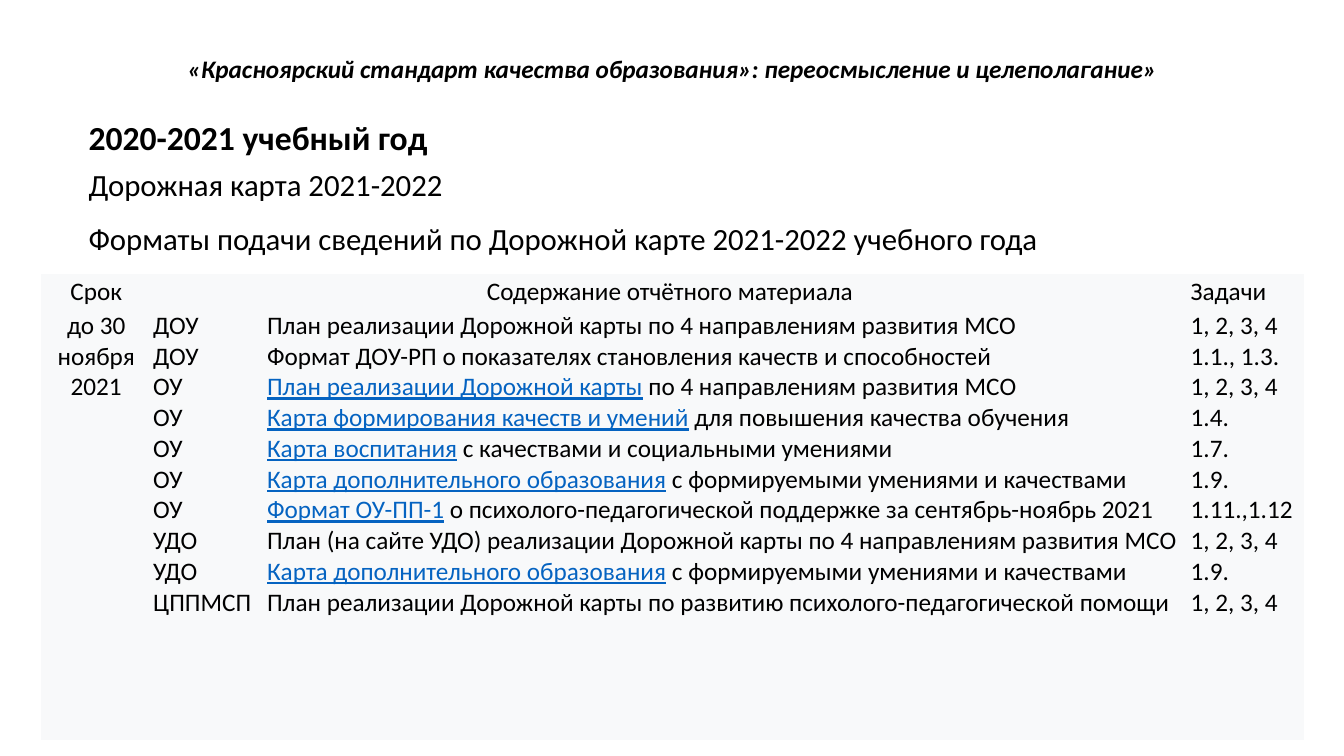
"""Build the roadmap reporting slide for the 2021-2022 school year."""
from dataclasses import dataclass

from pptx import Presentation
from pptx.dml.color import RGBColor
from pptx.enum.text import MSO_ANCHOR, PP_ALIGN
from pptx.oxml.ns import qn
from pptx.util import Inches, Pt

COLORS = {"ink": "000000", "link": "0563C1", "cell": "F8F9FA"}
FONT = "Calibri"
PLAIN = "{2D5ABB26-0587-4C30-8999-92F81FD0307C}"


@dataclass
class Report:
    """One reporting line: who hands it in, what it is, and its tasks."""
    org: str
    link: str
    text: str
    tasks: str


@dataclass
class Line:
    """One heading line above the table."""
    text: str
    size: int
    bold: bool
    gap: int


LINES = [
    Line("2020-2021 учебный год", 24, True, 0),
    Line("Дорожная карта 2021-2022", 22, False, 6),
    Line("Форматы подачи сведений по Дорожной карте 2021-2022 учебного года", 22, False, 6),
]
EXTRA = "Карта дополнительного образования"
SKILLS = " с формируемыми умениями и качествами"
PLAN = "План реализации Дорожной карты"
FOUR = " по 4 направлениям развития МСО"
ALL = "1, 2, 3, 4"
REPORTS = [
    Report("ДОУ", "", PLAN + FOUR, ALL),
    Report("ДОУ", "", "Формат ДОУ-РП о показателях становления качеств и способностей", "1.1., 1.3."),
    Report("ОУ", PLAN, FOUR, ALL),
    Report("ОУ", "Карта формирования качеств и умений", " для повышения качества обучения", "1.4."),
    Report("ОУ", "Карта воспитания", " с качествами и социальными умениями", "1.7."),
    Report("ОУ", EXTRA, SKILLS, "1.9."),
    Report("ОУ", "Формат ОУ-ПП-1",
           " о психолого-педагогической поддержке за сентябрь-ноябрь 2021", "1.11.,1.12"),
    Report("УДО", "", "План (на сайте УДО) реализации Дорожной карты" + FOUR, ALL),
    Report("УДО", EXTRA, SKILLS, "1.9."),
    Report("ЦППМСП", "", PLAN + " по развитию психолого-педагогической помощи", ALL),
]
WIDTHS = [1.09, 1.13, 9.16, 1.14]
HEIGHTS = [0.31, 4.28]


def write(para, text: str, size: int = 18, bold: bool = False,
          italic: bool = False, link: bool = False) -> None:
    """Add text to a paragraph, breaking the line at each newline."""
    for index, part in enumerate(text.split("\n")):
        if index:
            para.add_line_break()
        if not part:
            continue
        run = para.add_run()
        run.text = part
        font = run.font
        font.name, font.size = FONT, Pt(size)
        font.bold, font.italic, font.underline = bold, italic, link
        font.color.rgb = RGBColor.from_string(COLORS["link" if link else "ink"])


def add_box(slide, left: float, top: float, width: float, height: float):
    """Add a wrapping text box and return its frame."""
    frame = slide.shapes.add_textbox(
        Inches(left), Inches(top), Inches(width), Inches(height)).text_frame
    frame.word_wrap = True
    return frame


def add_head(slide) -> None:
    """Draw the title and the heading lines."""
    frame = add_box(slide, 0.41, 0.4, 12.52, 0.6)
    frame.vertical_anchor = MSO_ANCHOR.MIDDLE
    title = frame.paragraphs[0]
    title.alignment, title.line_spacing = PP_ALIGN.CENTER, 0.9
    write(title, "«Красноярский стандарт качества образования»: переосмысление и целеполагание»",
          bold=True, italic=True)
    frame = add_box(slide, 0.78, 1.11, 9.73, 1.5)
    for index, line in enumerate(LINES):
        para = frame.add_paragraph() if index else frame.paragraphs[0]
        para.space_before = para.space_after = Pt(line.gap)
        write(para, line.text, size=line.size, bold=line.bold)


def add_grid(slide) -> None:
    """Draw the table of reports."""
    shape = slide.shapes.add_table(2, 4, Inches(0.41), Inches(2.72),
                                   Inches(sum(WIDTHS)), Inches(sum(HEIGHTS)))
    shape.element.find(".//" + qn("a:tableStyleId")).text = PLAIN
    table = shape.table
    table.first_row = table.horz_banding = False
    for column, width in zip(table.columns, WIDTHS):
        column.width = Inches(width)
    for row, height in zip(table.rows, HEIGHTS):
        row.height = Inches(height)
    for cell in table.iter_cells():
        cell.margin_left = cell.margin_right = Inches(0.02)
        cell.margin_top = cell.margin_bottom = Inches(0.02)
        cell.fill.solid()
        cell.fill.fore_color.rgb = RGBColor.from_string(COLORS["cell"])
    table.cell(0, 1).merge(table.cell(0, 2))

    texts = {
        (0, 0): "Срок",
        (0, 1): "Содержание отчётного материала",
        (0, 3): "Задачи",
        (1, 0): "до 30 ноября 2021",
        (1, 1): "\n".join(report.org for report in REPORTS),
        (1, 3): "\n".join(report.tasks for report in REPORTS),
    }
    for (row, col), text in texts.items():
        cell = table.cell(row, col)
        cell.vertical_anchor = MSO_ANCHOR.TOP if row else MSO_ANCHOR.MIDDLE
        para = cell.text_frame.paragraphs[0]
        if col == 0 or (row, col) == (0, 1):
            para.alignment = PP_ALIGN.CENTER
        write(para, text)

    para = table.cell(1, 2).text_frame.paragraphs[0]
    for index, report in enumerate(REPORTS):
        if index:
            para.add_line_break()
        write(para, report.link, link=True)
        write(para, report.text)


def main() -> None:
    """Build and save the slide."""
    deck = Presentation()
    deck.slide_width, deck.slide_height = Inches(13.33), Inches(7.5)
    slide = deck.slides.add_slide(deck.slide_layouts[6])
    add_head(slide)
    add_grid(slide)
    deck.save("out.pptx")


if __name__ == "__main__":
    main()
